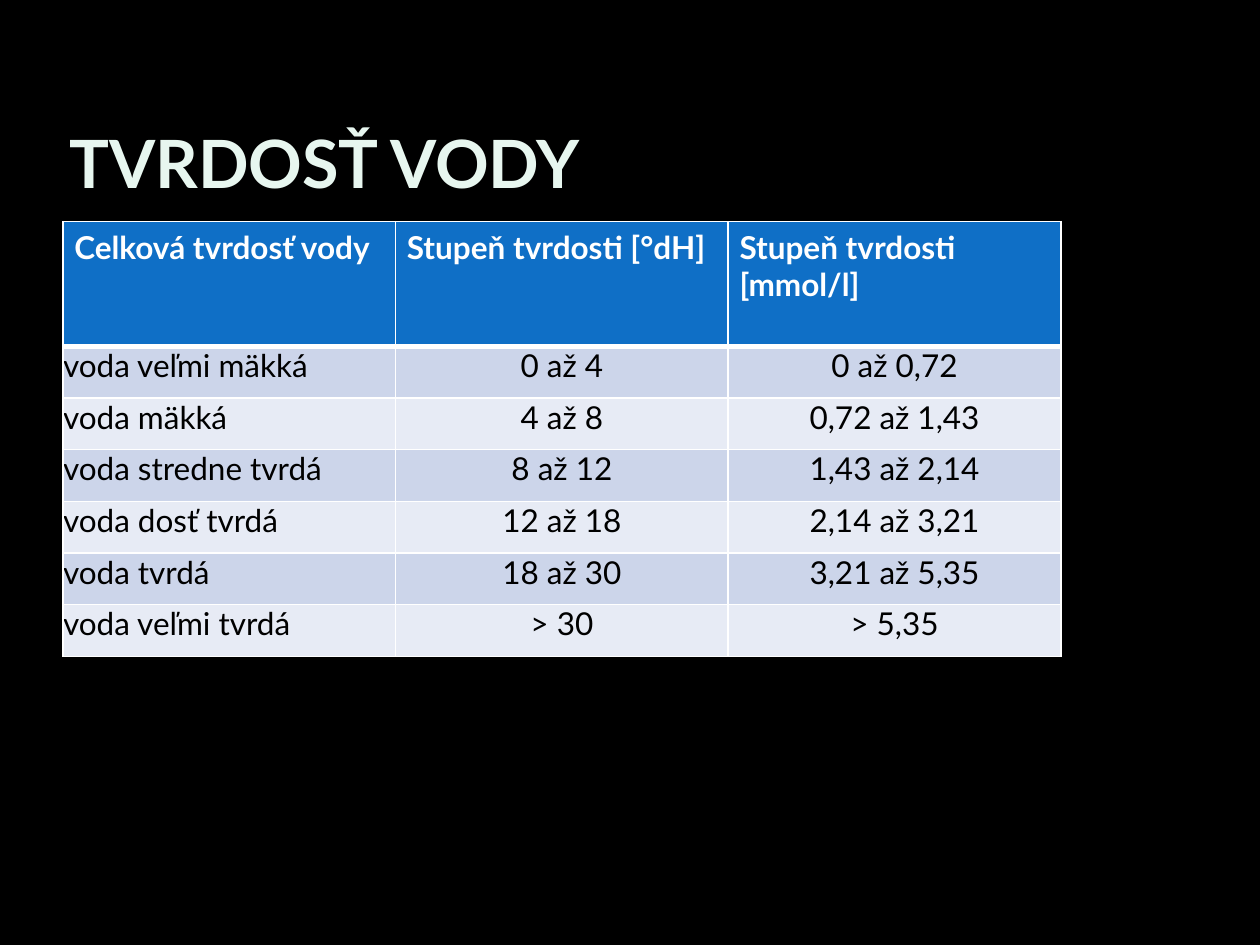
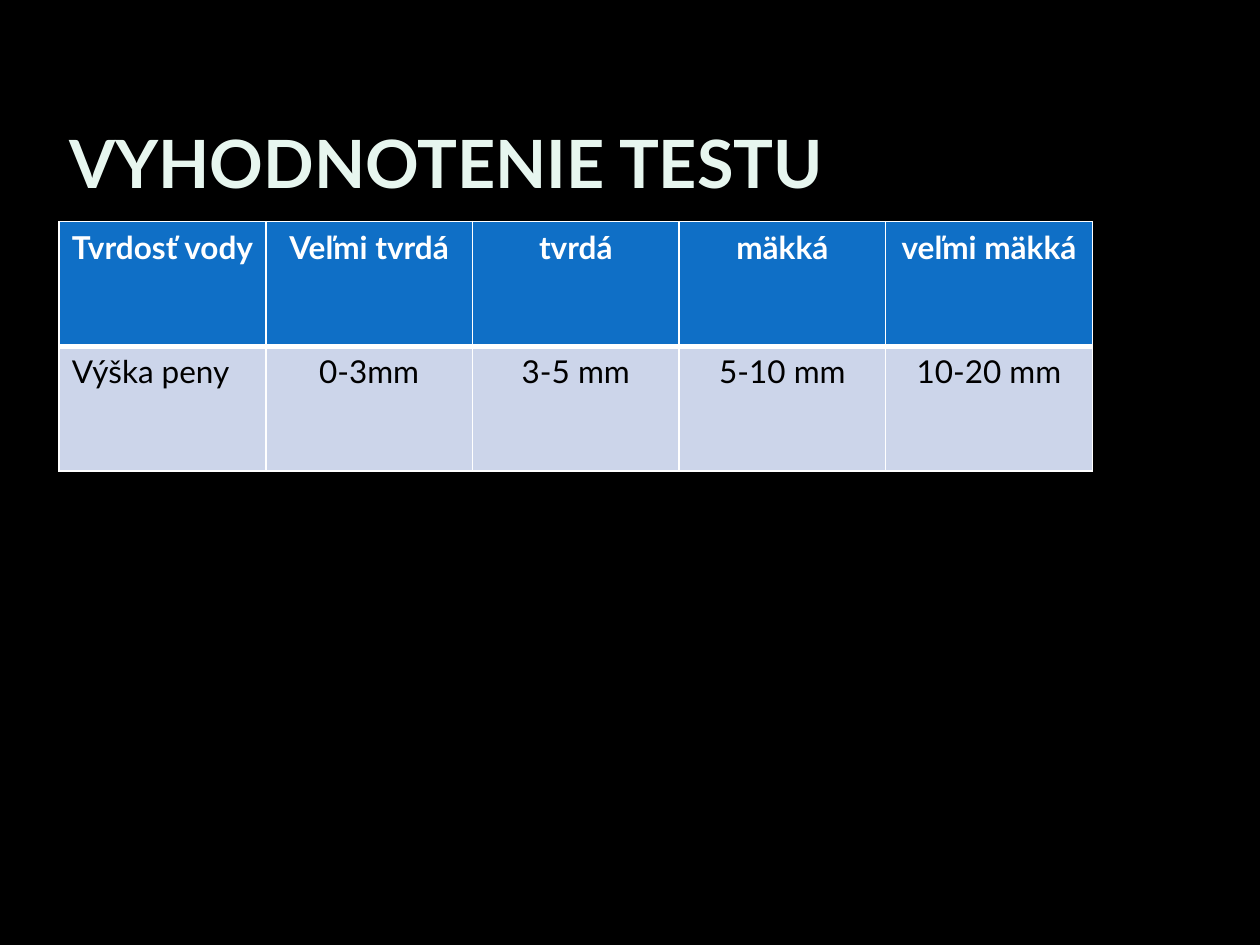
from lxml import etree
from pptx import Presentation
from pptx.dml.color import RGBColor
from pptx.enum.text import MSO_ANCHOR, PP_ALIGN
from pptx.oxml.ns import qn
from pptx.util import Inches, Pt

SLIDES = [
    {
        "title": "TVRDOSŤ VODY",
        "left": 0.5, "col_width": 2.64, "row_height": 0.41,
        "header_centred": False, "header_inset": (0.09, 0.05), "body_inset": (0, 0),
        "rows": [
            ("Celková tvrdosť vody", "Stupeň tvrdosti [°dH]", "Stupeň tvrdosti [mmol/l]"),
            ("voda veľmi mäkká", "0 až 4", "0 až 0,72"),
            ("voda mäkká", "4 až 8", "0,72 až 1,43"),
            ("voda stredne tvrdá", "8 až 12", "1,43 až 2,14"),
            ("voda dosť tvrdá", "12 až 18", "2,14 až 3,21"),
            ("voda tvrdá", "18 až 30", "3,21 až 5,35"),
            ("voda veľmi tvrdá", "> 30", "> 5,35"),
        ],
    },
    {
        "title": "VYHODNOTENIE TESTU",
        "left": 0.47, "col_width": 1.64, "row_height": 0.99,
        "header_centred": True, "header_inset": (0.1, 0.05), "body_inset": (0.1, 0.05),
        "rows": [
            ("Tvrdosť vody", "Veľmi tvrdá", "tvrdá", "mäkká", "veľmi mäkká"),
            ("Výška peny", "0-3mm", "3-5 mm", "5-10 mm", "10-20 mm"),
        ],
    },
]

COLORS = {
    "background": "000000", "title": "E7F6EF", "header": "0F6FC6",
    "odd": "CCD5EA", "even": "E7EBF5",
    "header_text": "FFFFFF", "body_text": "000000", "border": "FFFFFF",
}
FONT = "Lato"
TABLE_TOP = 1.76
HEADER_HEIGHT = 0.99
THIN, THICK = 1, 3


def rgb(name):
    return RGBColor.from_string(COLORS[name])


def style_text(p, size, color, bold):
    for r in p.runs:
        r.font.name = FONT
        r.font.size = Pt(size)
        r.font.bold = bold
        r.font.color.rgb = rgb(color)


def set_borders(cell, top, bottom):
    tcPr = cell._tc.get_or_add_tcPr()
    widths = {"a:lnL": THIN, "a:lnR": THIN, "a:lnT": top, "a:lnB": bottom}
    for i, (tag, width) in enumerate(widths.items()):
        ln = etree.Element(qn(tag), w=str(Pt(width)))
        fill = etree.SubElement(ln, qn("a:solidFill"))
        etree.SubElement(fill, qn("a:srgbClr"), val=COLORS["border"])
        tcPr.insert(i, ln)


def add_title(s, text):
    tf = s.shapes.add_textbox(Inches(0.5), Inches(0.35), Inches(7.92), Inches(1.25)).text_frame
    tf.word_wrap = True
    tf.vertical_anchor = MSO_ANCHOR.BOTTOM
    tf.margin_left = tf.margin_right = Inches(0.05)
    tf.margin_top = tf.margin_bottom = 0
    tf.text = text
    style_text(tf.paragraphs[0], 38, "title", True)


def fill_cell(cell, text, row, centred, inset):
    is_header = row == 0
    cell.margin_left = cell.margin_right = Inches(inset[0])
    cell.margin_top = cell.margin_bottom = Inches(inset[1])
    cell.fill.solid()
    cell.fill.fore_color.rgb = rgb("header" if is_header else "odd" if row % 2 else "even")
    set_borders(cell, THICK if row == 1 else THIN, THICK if is_header else THIN)
    cell.text_frame.text = text
    p = cell.text_frame.paragraphs[0]
    p.alignment = PP_ALIGN.CENTER if centred else PP_ALIGN.LEFT
    style_text(p, 18, "header_text" if is_header else "body_text", is_header)


def add_hardness_table(s, content):
    rows = content["rows"]
    n_rows, n_cols = len(rows), len(rows[0])
    height = HEADER_HEIGHT + (n_rows - 1) * content["row_height"]
    table = s.shapes.add_table(
        n_rows, n_cols, Inches(content["left"]), Inches(TABLE_TOP),
        Inches(n_cols * content["col_width"]), Inches(height)).table
    for column in table.columns:
        column.width = Inches(content["col_width"])
    for i, texts in enumerate(rows):
        is_header = i == 0
        table.rows[i].height = Inches(HEADER_HEIGHT if is_header else content["row_height"])
        inset = content["header_inset" if is_header else "body_inset"]
        for j, text in enumerate(texts):
            centred = j > 0 and (content["header_centred"] or not is_header)
            fill_cell(table.cell(i, j), text, i, centred, inset)


def main():
    prs = Presentation()
    prs.slide_width, prs.slide_height = Inches(10), Inches(7.5)
    for content in SLIDES:
        s = prs.slides.add_slide(prs.slide_layouts[6])
        s.background.fill.solid()
        s.background.fill.fore_color.rgb = rgb("background")
        add_title(s, content["title"])
        add_hardness_table(s, content)
    prs.save("out.pptx")


if __name__ == "__main__":
    main()
